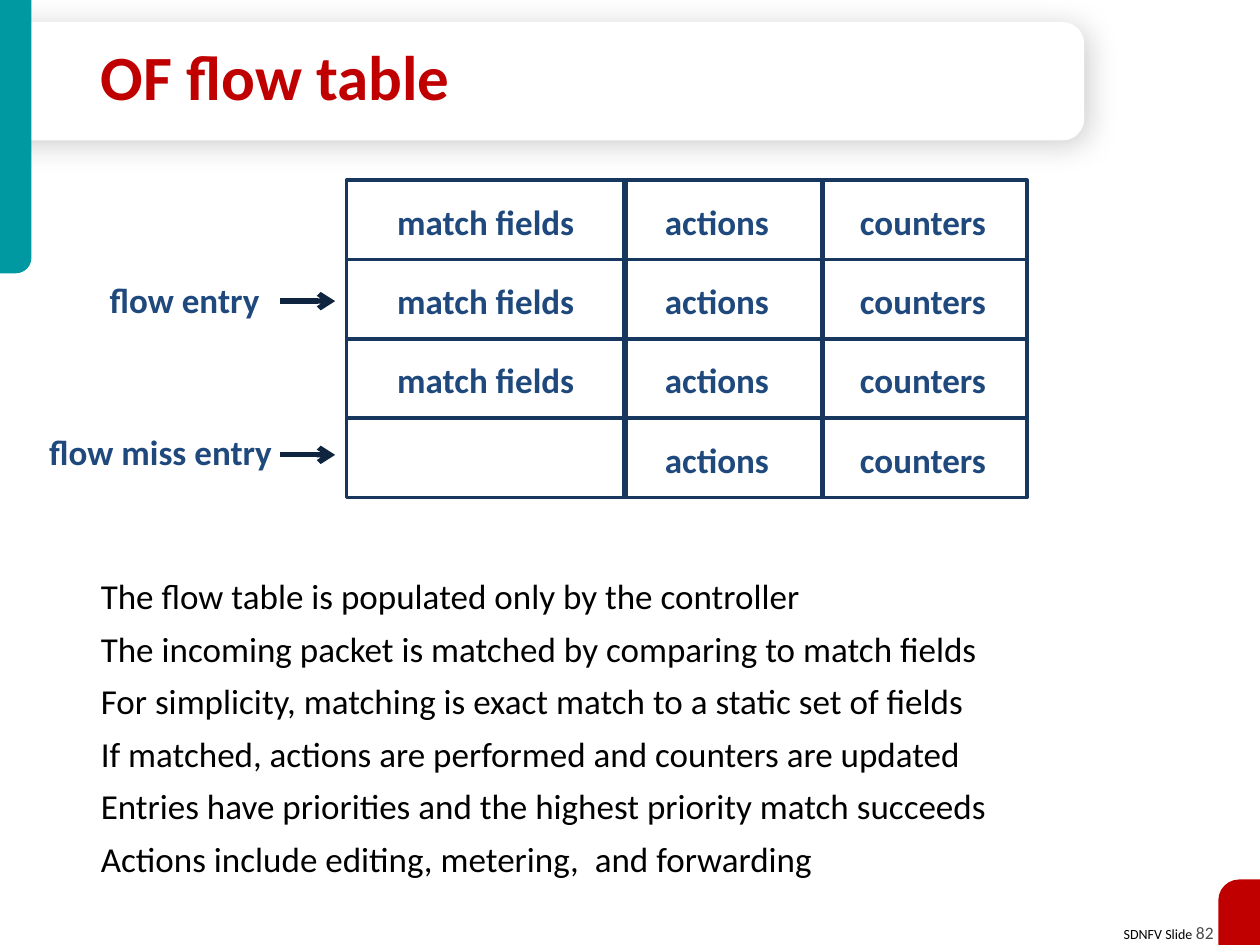
from lxml import etree
from pptx import Presentation
from pptx.dml.color import RGBColor
from pptx.enum.shapes import MSO_CONNECTOR, MSO_SHAPE
from pptx.enum.text import MSO_ANCHOR, MSO_AUTO_SIZE, PP_ALIGN
from pptx.oxml.ns import qn
from pptx.util import Inches, Pt

# Content
TITLE = "OF flow table"
POINTS = [
    "The flow table is populated only by the controller",
    "The incoming packet is matched by comparing to match fields",
    "For simplicity, matching is exact match to a static set of fields",
    "If matched, actions are performed and counters are updated",
    "Entries have priorities and the highest priority match succeeds",
    "Actions include editing, metering,  and forwarding",
]
FLOW_ROWS = [
    ("match fields", "actions", "counters"),
    ("match fields", "actions", "counters"),
    ("match fields", "actions", "counters"),
    ("", "actions", "counters"),
]
# label, left, top, height of its arrow
ENTRY_LABELS = [("flow entry", 0.45, 2.21, 2.39), ("flow miss entry", 0.26, 3.42, 3.61)]
FOOTER = [("SDNFV Slide ", 8, "000000"), ("82", 10, "4D4D4D")]

# Geometry in inches
TABLE_LEFT, TABLE_TOP, TABLE_WIDTH, ROW_HEIGHT = 2.75, 1.43, 5.4, 0.63
CELL_TEXTS = [(2.84, 2.03), (4.94, 1.5), (6.72, 1.21)]  # left, width
DIVIDERS = [4.96, 6.53]
ARROW_START, ARROW_END = 2.22, 2.66

FONT = "Calibri"
RED, TEAL, NAVY, BLUE, DARK = "C00000", "0098A1", "17375E", "1F497D", "0F243E"
ROUND_TWO = MSO_SHAPE.ROUND_2_SAME_RECTANGLE
ROUND_ONE = MSO_SHAPE.ROUND_1_RECTANGLE
RECTANGLE = MSO_SHAPE.RECTANGLE

prs = Presentation()
prs.slide_width, prs.slide_height = Inches(10), Inches(7.5)
slide = prs.slides.add_slide(prs.slide_layouts[1])
shapes = slide.shapes


def rgb(hex_color):
    return RGBColor.from_string(hex_color)


def style(font, size, color, bold=False):
    font.name, font.size, font.bold = FONT, Pt(size), bold
    font.color.rgb = rgb(color)


def add_block(kind, left, top, width, height, fill=None, adjust=(), flip=None):
    block = shapes.add_shape(kind, Inches(left), Inches(top), Inches(width), Inches(height))
    block.shadow.inherit = False
    for i, value in enumerate(adjust):
        block.adjustments[i] = value
    if fill:
        block.fill.solid()
        block.fill.fore_color.rgb = rgb(fill)
        block.line.fill.background()
    else:
        block.fill.background()
        block.line.color.rgb = rgb(NAVY)
        block.line.width = Pt(2)
    if flip:
        block._element.spPr.find(qn("a:xfrm")).set(flip, "1")
    return block


def add_line(x1, y1, x2, y2, color, arrow=False):
    line = shapes.add_connector(MSO_CONNECTOR.STRAIGHT, Inches(x1), Inches(y1), Inches(x2), Inches(y2))
    line.line.color.rgb = rgb(color)
    line.line.width = Pt(3)
    if arrow:
        etree.SubElement(line.line._get_or_add_ln(), qn("a:tailEnd"), type="arrow")
    etree.SubElement(line._element.spPr, qn("a:effectLst"))


def add_label(text, left, top, width):
    frame = shapes.add_textbox(Inches(left), Inches(top), Inches(width), Inches(0.39)).text_frame
    frame.word_wrap = True
    label = frame.paragraphs[0]
    label.text = text
    label.alignment, label.line_spacing = PP_ALIGN.CENTER, 0.85
    style(label.font, 20, BLUE, True)


def place(holder, left, top, width, height, anchor):
    holder.left, holder.top = Inches(left), Inches(top)
    holder.width, holder.height = Inches(width), Inches(height)
    holder.text_frame.auto_size = MSO_AUTO_SIZE.NONE
    holder.text_frame.vertical_anchor = anchor
    shapes._spTree.append(holder._element)  # in front of the decoration


# Footer
footer_box = shapes.add_textbox(Inches(8.79), Inches(7.27), Inches(0.94), Inches(0.27))
footer_box.text_frame.word_wrap = False
footer = footer_box.text_frame.paragraphs[0]
footer.alignment = PP_ALIGN.RIGHT
for text, size, color in FOOTER:
    run = footer.add_run()
    run.text = text
    style(run.font, size, color)

# Title banner with soft shadow, and corner tabs
banner = add_block(ROUND_TWO, 3.83, -3.66, 0.94, 8.61, "FFFFFF", (0.184, 0))
banner.rotation = 90
shadow = etree.SubElement(
    banner._element.spPr.find(qn("a:effectLst")), qn("a:outerShdw"),
    blurRad=str(Pt(17)), dist=str(Pt(3)), dir=str(45 * 60000), algn="ctr", rotWithShape="0")
shadow_color = etree.SubElement(shadow, qn("a:srgbClr"), val="000000")
etree.SubElement(shadow_color, qn("a:alpha"), val="19000")
add_block(ROUND_ONE, 0, 0, 0.25, 2.17, TEAL, (0.5,), "flipV")
add_block(ROUND_ONE, 9.67, 6.98, 0.33, 0.52, RED, (0.5,), "flipH")

# Title
title = shapes.title
place(title, 0.7, 0.29, 7.4, 0.71, MSO_ANCHOR.MIDDLE)
title.text_frame.text = TITLE
heading = title.text_frame.paragraphs[0]
heading.alignment, heading.line_spacing = PP_ALIGN.LEFT, 0.85
style(heading.font, 36, RED, True)

# Points
body = slide.placeholders[1]
place(body, 0.7, 4.51, 8.35, 2.58, MSO_ANCHOR.TOP)
body.text_frame.text = "\n".join(POINTS)
for i, point in enumerate(body.text_frame.paragraphs):
    properties = point._p.get_or_add_pPr()
    properties.set("marL", str(Inches(0.25)))
    properties.set("indent", str(-Inches(0.25)))
    etree.SubElement(properties, qn("a:buNone"))
    point.space_before = Pt(6 if i else 0)
    style(point.font, 20, "000000")

# Flow table
for row, cells in enumerate(FLOW_ROWS):
    top = TABLE_TOP + row * ROW_HEIGHT
    add_block(RECTANGLE, TABLE_LEFT, top, TABLE_WIDTH, ROW_HEIGHT)
    for x in DIVIDERS:
        add_line(x, top, x, top + ROW_HEIGHT, NAVY)
    for text, (left, width) in zip(cells, CELL_TEXTS):
        if text:
            add_label(text, left, top + 0.16, width)

# Entry labels and arrows
for text, left, top, arrow_y in ENTRY_LABELS:
    add_label(text, left, top, 2.03)
    add_line(ARROW_START, arrow_y, ARROW_END, arrow_y, DARK, arrow=True)

prs.save("out.pptx")
